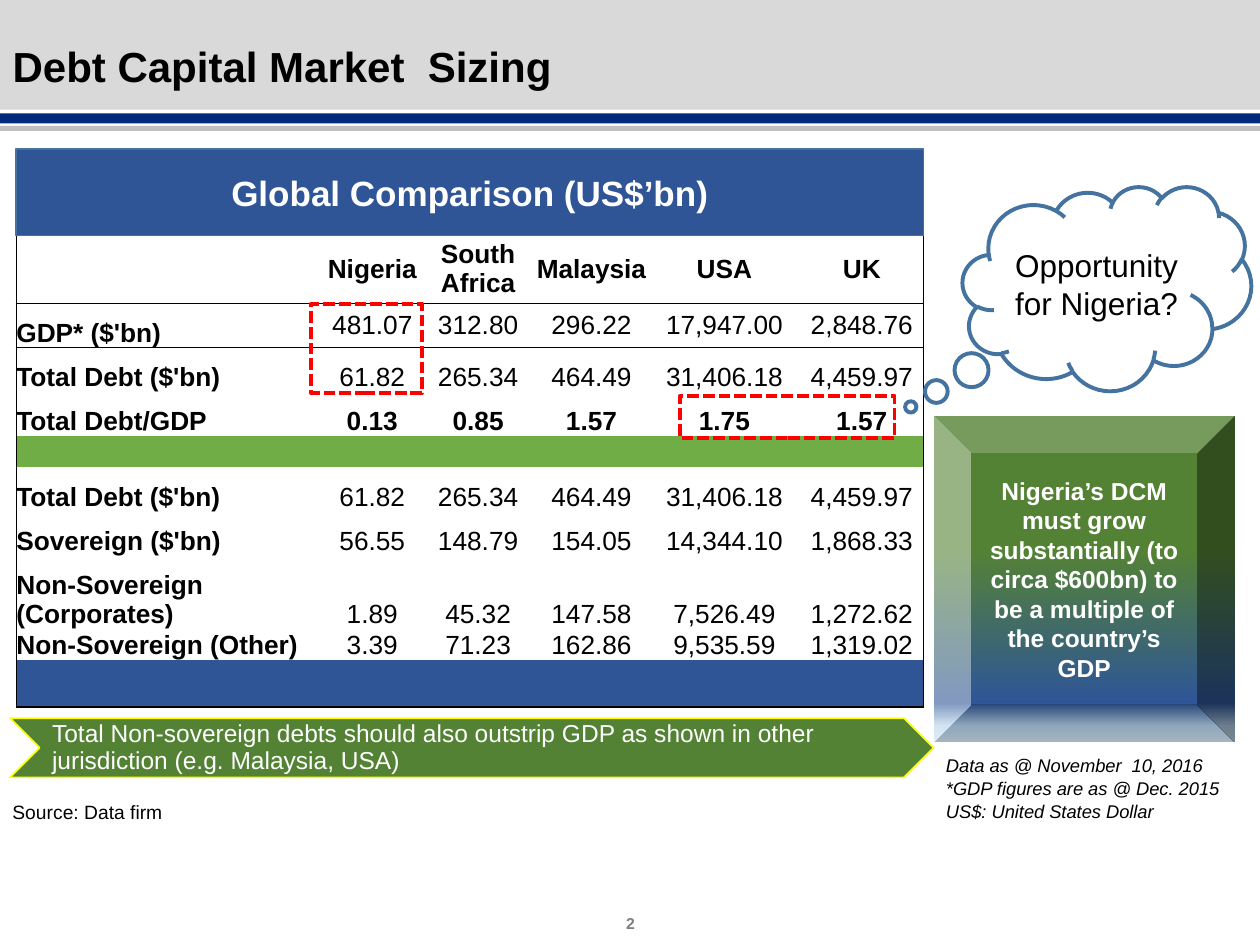
"""Build the debt capital market sizing slide."""
from copy import deepcopy

from lxml import etree
from pptx import Presentation
from pptx.dml.color import RGBColor
from pptx.enum import dml, shapes, text
from pptx.oxml import ns
from pptx.util import Inches, Pt

BLACK = RGBColor(0x00, 0x00, 0x00)
WHITE = RGBColor(0xFF, 0xFF, 0xFF)
LIGHT_GREY = RGBColor(0xD9, 0xD9, 0xD9)
MID_GREY = RGBColor(0xBF, 0xBF, 0xBF)
DARK_GREY = RGBColor(0x7F, 0x7F, 0x7F)
NAVY = RGBColor(0x00, 0x29, 0x7A)
BLUE = RGBColor(0x2F, 0x55, 0x97)
OUTLINE_BLUE = RGBColor(0x43, 0x73, 0x9E)
GREEN = RGBColor(0x70, 0xAD, 0x47)
DARK_GREEN = RGBColor(0x54, 0x82, 0x35)
PALE_BLUE = RGBColor(0xB5, 0xD2, 0xEC)
PALER_BLUE = RGBColor(0xCE, 0xE1, 0xF2)
RED = RGBColor(0xFF, 0x00, 0x00)
YELLOW = RGBColor(0xFF, 0xFF, 0x00)

LEFT, CENTER = text.PP_ALIGN.LEFT, text.PP_ALIGN.CENTER
TOP, MIDDLE, BOTTOM = text.MSO_ANCHOR.TOP, text.MSO_ANCHOR.MIDDLE, text.MSO_ANCHOR.BOTTOM
PRESET = shapes.MSO_SHAPE


def write(frame, words, size, color=BLACK, bold=False, italic=False,
          align=LEFT, anchor=MIDDLE, spacing=None):
    frame.text = words
    frame.word_wrap = True
    frame.vertical_anchor = anchor
    for paragraph in frame.paragraphs:
        paragraph.alignment = align
        paragraph.line_spacing = spacing
        font = paragraph.font
        font.name, font.size, font.bold, font.italic = "Arial", Pt(size), bold, italic
        font.color.rgb = color


def add_shape(preset, box, fill=None, line=None, width=1):
    shape = slide.shapes.add_shape(preset, *map(Inches, box))
    shape.shadow.inherit = False
    if fill is None:
        shape.fill.background()
    else:
        shape.fill.solid()
        shape.fill.fore_color.rgb = fill
    if line is None:
        shape.line.fill.background()
    else:
        shape.line.color.rgb = line
        shape.line.width = Pt(width)
    return shape


presentation = Presentation()
presentation.slide_width, presentation.slide_height = Inches(10), Inches(7.5)
slide = presentation.slides.add_slide(presentation.slide_layouts[5])

for box, color in [((0, 0, 10, 0.87), LIGHT_GREY),
                   ((0, 1, 10, 0.04), MID_GREY),
                   ((0, 0.9, 10, 0.08), NAVY)]:
    add_shape(PRESET.RECTANGLE, box, color)

title = slide.shapes.title
title.left, title.top, title.width, title.height = map(Inches, (0, 0.24, 9.93, 0.62))
write(title.text_frame, "Debt Capital Market  Sizing", 24, bold=True, spacing=0.9)
slide.shapes._spTree.append(title._element)

page_number = slide.shapes.add_textbox(*map(Inches, (3.88, 7.17, 2.25, 0.32)))
write(page_number.text_frame, "2", 9, DARK_GREY, bold=True, align=CENTER)

blank = [""] * 6
rows = [
    (0.67, blank),
    (0.55, ["", "Nigeria", "South Africa", "Malaysia", "USA", "UK"]),
    (0.35, ["GDP* ($'bn)", "481.07", "312.80", "296.22", "17,947.00", "2,848.76"]),
    (0.35, ["Total Debt ($'bn)", "61.82", "265.34", "464.49", "31,406.18", "4,459.97"]),
    (0.35, ["Total Debt/GDP", "0.13", "0.85", "1.57", "1.75", "1.57"]),
    (0.25, blank),
    (0.35, ["Total Debt ($'bn)", "61.82", "265.34", "464.49", "31,406.18", "4,459.97"]),
    (0.35, ["Sovereign ($'bn)", "56.55", "148.79", "154.05", "14,344.10", "1,868.33"]),
    (0.58, ["Non-Sovereign (Corporates)", "1.89", "45.32", "147.58", "7,526.49", "1,272.62"]),
    (0.25, ["Non-Sovereign (Other)", "3.39", "71.23", "162.86", "9,535.59", "1,319.02"]),
    (0.37, blank),
]
band_colors = {0: BLUE, 5: GREEN, 10: BLUE}
bold_rows = (1, 4)
last_row, last_column = len(rows) - 1, 5

frame = slide.shapes.add_table(len(rows), 6, *map(Inches, (0.13, 1.19, 7.2, 4.42)))
table = frame.table
table.first_row = table.horz_banding = False
style = table._tbl.tblPr.find(ns.qn("a:tableStyleId"))
style.text = "{2D5ABB26-0587-4C30-8999-92F81FD0307C}"
for column, width in zip(table.columns, (2.43, 0.79, 0.89, 0.91, 1.2, 0.98)):
    column.width = Inches(width)

for r, (height, values) in enumerate(rows):
    table.rows[r].height = Inches(height)
    for c, value in enumerate(values):
        cell = table.cell(r, c)
        cell.margin_left = cell.margin_right = cell.margin_top = cell.margin_bottom = 0
        write(cell.text_frame, value, 15 if value else 8, bold=c == 0 or r in bold_rows,
              align=CENTER if c else LEFT)
        cell.vertical_anchor = MIDDLE if r == 1 or (r == 2 and c) else BOTTOM
        borders = {
            "a:lnL": 1 if c == 0 else 0,
            "a:lnR": 1 if c == last_column or r == 0 else 0,
            "a:lnT": {0: 1, 1: 0.5, 2: 0.5}.get(r, 0),
            "a:lnB": {0: 0.5, 1: 0.5, last_row: 1}.get(r, 0),
        }
        properties = cell._tc.get_or_add_tcPr()
        for tag, points in borders.items():
            if points:
                border = etree.SubElement(properties, ns.qn(tag), w=str(Pt(points)))
                solid = etree.SubElement(border, ns.qn("a:solidFill"))
                etree.SubElement(solid, ns.qn("a:srgbClr"), val=str(BLACK))
        if r in band_colors:
            cell.fill.solid()
            cell.fill.fore_color.rgb = band_colors[r]
        else:
            cell.fill.background()
table.cell(0, 0).merge(table.cell(0, last_column))

heading = add_shape(PRESET.RECTANGLE, (0.13, 1.18, 7.2, 0.69), BLUE, OUTLINE_BLUE)
write(heading.text_frame, "Global Comparison (US$’bn)", 20, WHITE, bold=True, align=CENTER)

notes = slide.shapes.add_textbox(*map(Inches, (7.41, 5.93, 2.57, 0.65)))
write(notes.text_frame,
      "Data as @ November  10, 2016\n*GDP figures are as @ Dec. 2015\nUS$: United States Dollar",
      10.5, italic=True, anchor=TOP, spacing=Pt(13))

source = slide.shapes.add_textbox(*map(Inches, (0, 6.3, 1.52, 0.29)))
write(source.text_frame, "Source: Data firm", 11, anchor=TOP)
source.text_frame.word_wrap = False

bevel = add_shape(PRESET.BEVEL, (7.41, 3.3, 2.39, 2.59))
bevel.fill.gradient()
bevel.fill.gradient_angle = 270
stop_list = bevel._element.spPr.find(".//" + ns.qn("a:gsLst"))
for stop in list(stop_list)[:2]:
    stop_list.append(deepcopy(stop))
stops = [(0.41, DARK_GREEN), (0.88, BLUE), (0.95, PALE_BLUE), (1, PALER_BLUE)]
for stop, (position, color) in zip(bevel.fill.gradient_stops, stops):
    stop.position = position
    stop.color.rgb = color
write(bevel.text_frame,
      "Nigeria’s DCM must grow substantially (to circa $600bn) to be a multiple of "
      "the country’s GDP", 14, WHITE, bold=True, align=CENTER)

for box in [(2.47, 2.41, 0.88, 0.71), (5.4, 3.14, 1.7, 0.34)]:
    highlight = add_shape(PRESET.RECTANGLE, box, line=RED, width=2.25)
    highlight.line.dash_style = dml.MSO_LINE.SQUARE_DOT

cloud = add_shape(PRESET.CLOUD_CALLOUT, (7.64, 1.48, 2.29, 1.62), line=OUTLINE_BLUE, width=2.25)
cloud.adjustments[0], cloud.adjustments[1] = -0.68, 0.58
write(cloud.text_frame, "Opportunity for Nigeria?", 18, align=CENTER)

chevron = add_shape(PRESET.CHEVRON, (0.08, 5.7, 7.33, 0.47), DARK_GREEN, YELLOW)
write(chevron.text_frame,
      "Total Non-sovereign debts should also outstrip GDP as shown in other "
      "jurisdiction (e.g. Malaysia, USA)", 14, WHITE, spacing=Pt(15))

presentation.save("out.pptx")
